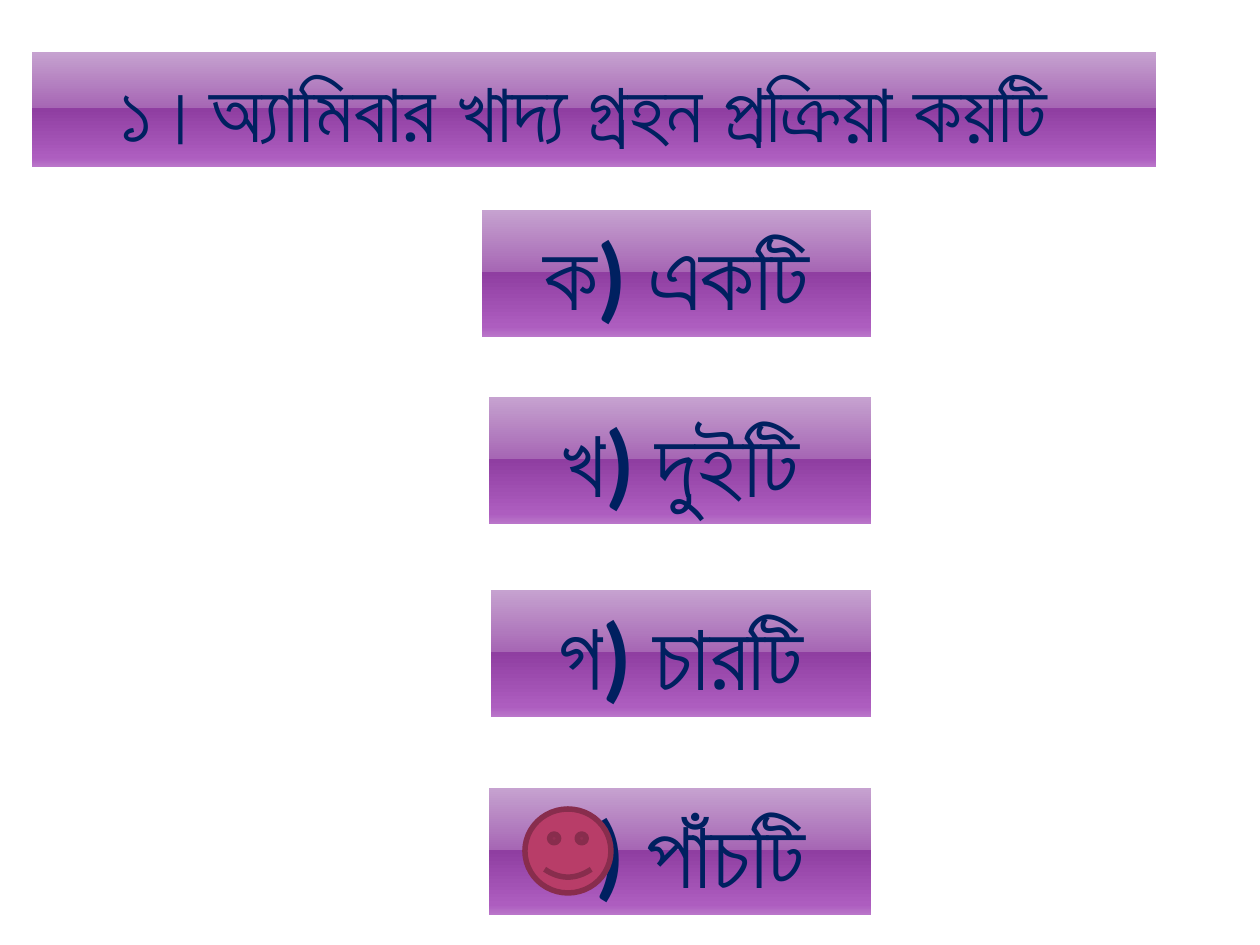
from lxml import etree
from pptx import Presentation
from pptx import util as u
from pptx.dml.color import RGBColor
from pptx.enum import shapes, text
from pptx.oxml.ns import qn

PX = u.Inches(1) / 126
NAVY = RGBColor(0x00, 0x20, 0x60)
ROSE = RGBColor(0xB8, 0x3D, 0x68)
DARK_ROSE = RGBColor(0x88, 0x2D, 0x4D)
PURPLE_STOPS = [
    (0, RGBColor(0xC6, 0xA2, 0xD0)),
    (49, RGBColor(0xA6, 0x66, 0xB4)),
    (49, RGBColor(0x8F, 0x3E, 0xA1)),
    (92, RGBColor(0xAD, 0x5D, 0xBF)),
    (100, RGBColor(0xBA, 0x76, 0xCA)),
]


def px(*lengths):
    return [u.Emu(round(length * PX)) for length in lengths]


def fill_purple(box):
    box.fill.gradient()
    box.fill.gradient_angle = 270
    stop_list = next(box._element.iter(qn("a:gsLst")))
    for stop in list(stop_list):
        stop_list.remove(stop)
    for percent, color in PURPLE_STOPS:
        stop = etree.SubElement(stop_list, qn("a:gs"), pos=str(percent * 1000))
        etree.SubElement(stop, qn("a:srgbClr"), val=str(color))


deck = Presentation()
deck.slide_width, deck.slide_height = px(1260, 945)
page = deck.slides.add_slide(deck.slide_layouts[6])

RIGHT = 871
question = ("১।অ্যামিবার খাদ্য গ্রহন প্রক্রিয়া কয়টি ", 32, 52, 1124, 115, 48, False)
answers = [
    (label, left, top, RIGHT - left, 127, 54, True)
    for label, left, top in [
        ("ক) একটি", 482, 210),
        ("খ) দুইটি", 489, 397),
        ("গ) চারটি", 491, 590),
        ("ঘ) পাঁচটি", 489, 788),
    ]
]

for label, left, top, width, height, size, bold in [question] + answers:
    box = page.shapes.add_textbox(*px(left, top, width, height))
    fill_purple(box)
    frame = box.text_frame
    frame.word_wrap = True
    frame.auto_size = text.MSO_AUTO_SIZE.SHAPE_TO_FIT_TEXT
    frame.text = label
    para = frame.paragraphs[0]
    para.alignment = text.PP_ALIGN.CENTER
    span = para.runs[0]
    span.font.name = "Calibri"
    span.font.size = u.Pt(size)
    span.font.bold = bold
    span.font.color.rgb = NAVY

smiley = page.shapes.add_shape(shapes.MSO_SHAPE.SMILEY_FACE, *px(525, 809, 86, 84))
smiley.shadow.inherit = False
smiley.fill.solid()
smiley.fill.fore_color.rgb = ROSE
smiley.line.color.rgb = DARK_ROSE
smiley.line.width = u.Pt(3.15)

deck.save("out.pptx")
